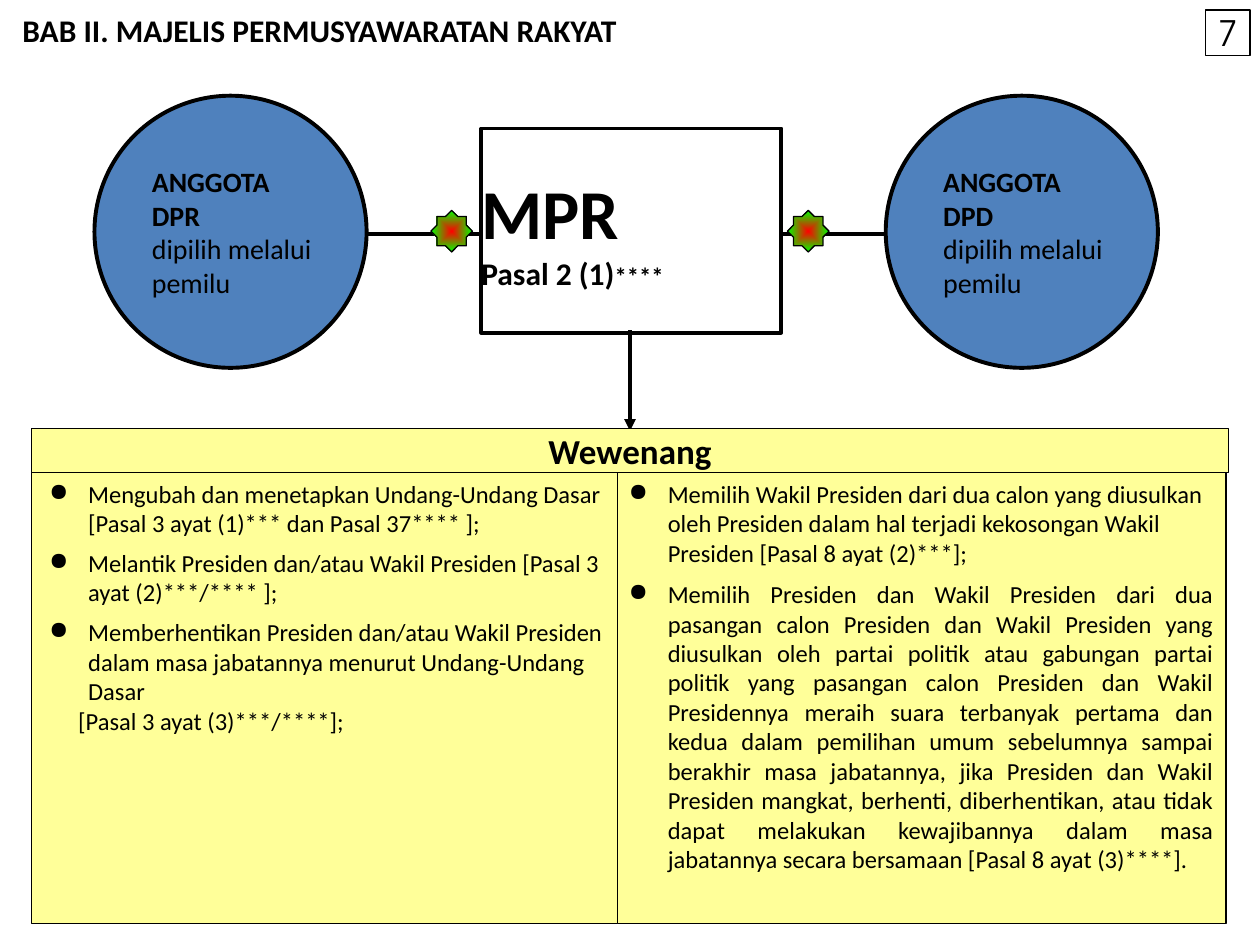
from lxml import etree
from pptx import Presentation
from pptx.dml.color import RGBColor
from pptx.enum.shapes import MSO_CONNECTOR, MSO_SHAPE
from pptx.enum.text import MSO_ANCHOR, PP_ALIGN
from pptx.oxml.ns import qn
from pptx.util import Inches, Pt

LEFT, CENTER, JUSTIFY = PP_ALIGN.LEFT, PP_ALIGN.CENTER, PP_ALIGN.JUSTIFY
TOP, MIDDLE = MSO_ANCHOR.TOP, MSO_ANCHOR.MIDDLE
RECTANGLE, OVAL, STAR = MSO_SHAPE.RECTANGLE, MSO_SHAPE.OVAL, MSO_SHAPE.STAR_8_POINT
STRAIGHT = MSO_CONNECTOR.STRAIGHT

BLACK, BLUE, YELLOW = "000000", "4F81BD", "FFFF99"
RED, GREEN = "FF0000", "00FF00"
THICK, THIN = 2.25, 0.75


def color(value):
    return RGBColor.from_string(value)


def write(frame, text, size=14, bold=False, font="Calibri", align=LEFT, before=0,
          after=0, margin=0, hanging=0, bullet=None, extra=None):
    """Add one paragraph, optionally bulleted, with an optional smaller (text, size) span."""
    first = frame.paragraphs[0]
    para = frame.add_paragraph() if first.runs else first
    para.alignment = align
    para.space_before, para.space_after = Pt(before), Pt(after)
    for content, points in [(text, size)] + ([extra] if extra else []):
        span = para.add_run()
        span.text = content
        span.font.size, span.font.bold, span.font.name = Pt(points), bold, font
        span.font.color.rgb = color(BLACK)
    properties = para._p.get_or_add_pPr()
    properties.set("marL", str(Inches(margin)))
    properties.set("indent", str(Inches(-hanging)))
    if bullet:
        etree.SubElement(properties, qn("a:buChar")).set("char", bullet)


class Page:
    """Holds the current slide and draws its elements in one style."""

    def __init__(self, slide):
        self.shapes = slide.shapes

    def set_frame(self, box, insets, anchor, wrap):
        frame = box.text_frame
        frame.word_wrap, frame.vertical_anchor = wrap, anchor
        (frame.margin_left, frame.margin_top,
         frame.margin_right, frame.margin_bottom) = map(Inches, insets)
        return frame

    def add_text(self, *place):
        box = self.shapes.add_textbox(*map(Inches, place))
        return self.set_frame(box, (0.1, 0.05, 0.1, 0.05), TOP, True)

    def add_shape(self, kind, place, fill=None, width=THIN):
        shape = self.shapes.add_shape(kind, *map(Inches, place))
        shape.shadow.inherit = False
        shape.line.color.rgb, shape.line.width = color(BLACK), Pt(width)
        if fill:
            shape.fill.solid()
            shape.fill.fore_color.rgb = color(fill)
        else:
            shape.fill.background()
        return shape

    def add_box(self, kind, place, fill=None, width=THIN,
                insets=(0.1, 0.05, 0.1, 0.05), anchor=MIDDLE, wrap=True):
        shape = self.add_shape(kind, place, fill, width)
        return self.set_frame(shape, insets, anchor, wrap)

    def add_star(self, left, top, size):
        star = self.add_shape(STAR, (left, top, size, size))
        star.adjustments[0] = 0.383
        star.fill.gradient()
        for stop, value, position in zip(star.fill.gradient_stops, (RED, GREEN), (0, 1)):
            stop.color.rgb, stop.position = color(value), position
        gradient = star._element.spPr.find(qn("a:gradFill"))
        gradient.remove(gradient.find(qn("a:lin")))
        route = etree.SubElement(gradient, qn("a:path"))
        route.set("path", "shape")
        center = etree.SubElement(route, qn("a:fillToRect"))
        for side in "ltrb":
            center.set(side, "50000")

    def add_line(self, *ends, arrow=False):
        line = self.shapes.add_connector(STRAIGHT, *map(Inches, ends))
        line.line.color.rgb, line.line.width = color(BLACK), Pt(THICK)
        if arrow:
            outline = line.line._get_or_add_ln()
            etree.SubElement(outline, qn("a:tailEnd")).set("type", "triangle")
        etree.SubElement(line._element.spPr, qn("a:effectLst"))


def main():
    deck = Presentation()
    deck.slide_width, deck.slide_height = Inches(10), Inches(7.5)
    page = Page(deck.slides.add_slide(deck.slide_layouts[6]))

    page.add_line(5, 2.62, 5, 3.42, arrow=True)
    for start, end, star in ((2.89, 3.81, 3.42), (6.19, 7.03, 6.25)):
        page.add_line(start, 1.86, end, 1.86)
        page.add_star(star, 1.67, 0.33)

    assembly = page.add_box(RECTANGLE, (3.82, 1.02, 2.38, 1.62), width=THICK,
                            insets=(0, 0.05, 0, 0.05), wrap=False)
    write(assembly, "MPR", size=40, bold=True)
    write(assembly, "Pasal 2 (1)", size=18, bold=True, extra=("****", 14))

    item = {"margin": 0.4, "hanging": 0.31, "bullet": "●"}
    duties = page.add_box(RECTANGLE, (0.25, 3.75, 4.67, 3.58), YELLOW,
                          insets=(0.05, 0.05, 0.05, 0.05), anchor=TOP)
    for duty in (
        "Mengubah dan menetapkan Undang-Undang Dasar [Pasal 3 ayat (1)*** dan Pasal 37**** ];",
        "Melantik Presiden dan/atau Wakil Presiden [Pasal 3 ayat (2)***/**** ];",
        "Memberhentikan Presiden dan/atau Wakil Presiden dalam masa jabatannya "
        "menurut Undang-Undang Dasar",
    ):
        write(duties, duty, before=6, **item)
    write(duties, "[Pasal 3 ayat (3)***/****];", margin=0.32)

    elections = page.add_box(RECTANGLE, (4.9, 3.75, 4.83, 3.58), YELLOW,
                             insets=(0, 0.05, 0.1, 0.05), anchor=TOP)
    write(elections, "Memilih Wakil Presiden dari dua calon yang diusulkan oleh Presiden "
          "dalam hal terjadi kekosongan Wakil Presiden [Pasal 8 ayat (2)***];",
          before=6, after=7, **item)
    write(elections, "Memilih Presiden dan Wakil Presiden dari dua pasangan calon Presiden "
          "dan Wakil Presiden yang diusulkan oleh partai politik atau gabungan partai politik "
          "yang pasangan calon Presiden dan Wakil Presidennya meraih suara terbanyak pertama "
          "dan kedua dalam pemilihan umum sebelumnya sampai berakhir masa jabatannya, jika "
          "Presiden dan Wakil Presiden mangkat, berhenti, diberhentikan, atau tidak dapat "
          "melakukan kewajibannya dalam masa jabatannya secara bersamaan "
          "[Pasal 8 ayat (3)****].", align=JUSTIFY, **item)

    heading = page.add_box(RECTANGLE, (0.25, 3.4, 9.5, 0.35), YELLOW)
    write(heading, "Wewenang", size=20, bold=True, align=CENTER)

    title = page.add_text(0.08, 0.04, 6.5, 0.42)
    write(title, "BAB II. MAJELIS PERMUSYAWARATAN RAKYAT", size=18, bold=True)

    for left, names in ((0.75, ["ANGGOTA DPR"]), (7.03, ["ANGGOTA", "DPD"])):
        members = page.add_box(OVAL, (left, 0.76, 2.16, 2.16), BLUE, THICK,
                               insets=(0.14, 0.05, 0.08, 0.05))
        for name in names:
            write(members, name, size=16, bold=True)
        write(members, "dipilih melalui pemilu", size=16)

    number = page.add_box(RECTANGLE, (9.57, 0.08, 0.35, 0.36), insets=(0, 0, 0, 0))
    write(number, "7", size=20, font="TeX Gyre Adventor", align=CENTER)

    deck.save("out.pptx")


if __name__ == "__main__":
    main()
